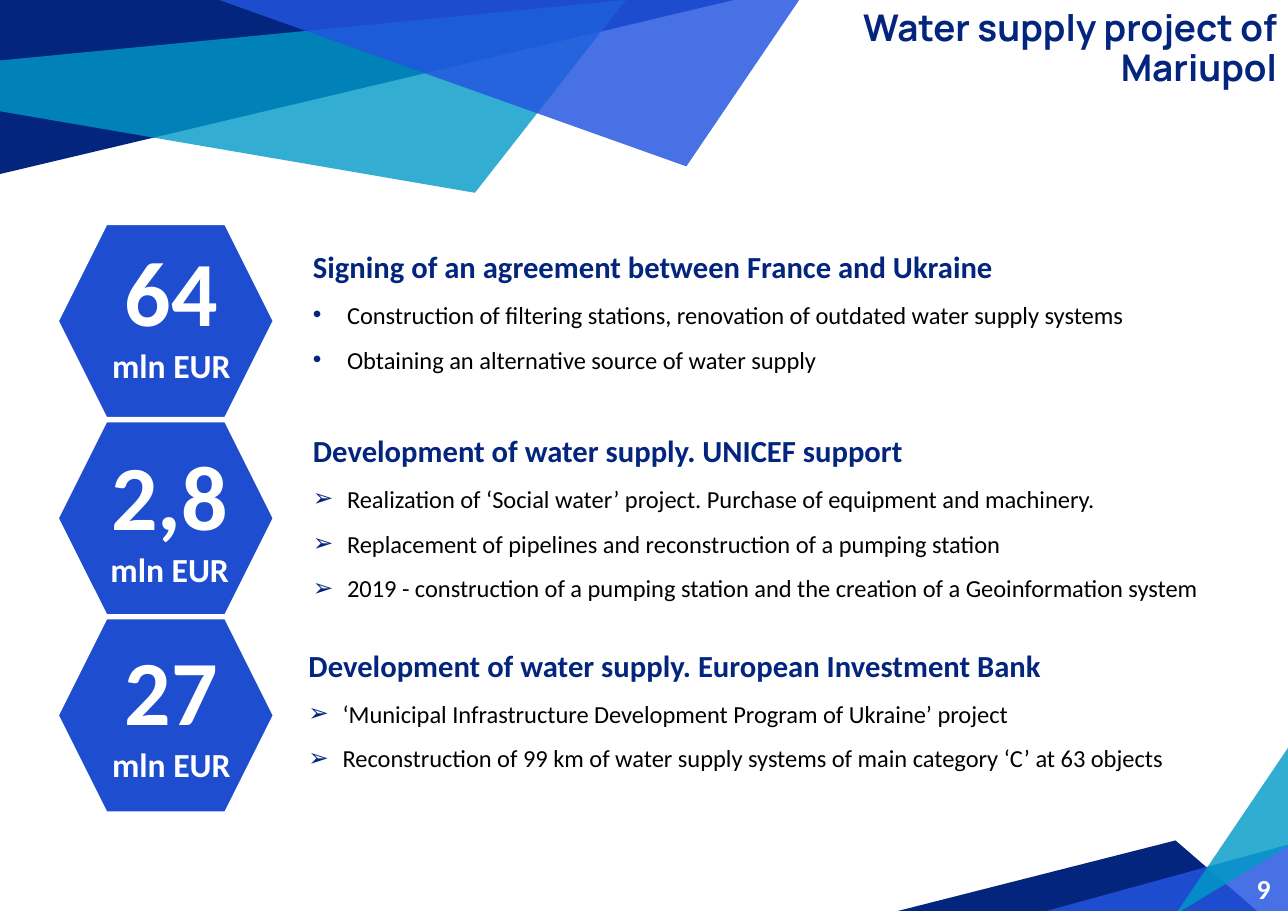
from dataclasses import dataclass

from lxml import etree
from pptx import Presentation
from pptx.dml.color import RGBColor
from pptx.enum.shapes import MSO_SHAPE
from pptx.enum.text import MSO_ANCHOR, MSO_AUTO_SIZE, PP_ALIGN
from pptx.oxml.ns import qn
from pptx.util import Inches, Pt

HEXAGON = MSO_SHAPE.HEXAGON
TOP, MIDDLE = MSO_ANCHOR.TOP, MSO_ANCHOR.MIDDLE
NO_AUTOFIT = MSO_AUTO_SIZE.NONE
LEFT, CENTER, RIGHT = PP_ALIGN.LEFT, PP_ALIGN.CENTER, PP_ALIGN.RIGHT


@dataclass(frozen=True)
class Theme:
    navy: str = "03257E"
    royal: str = "2455E0"
    cyan: str = "009AC7"
    badge: str = "1E4DD0"
    white: str = "FFFFFF"
    black: str = "000000"
    body_font: str = "Calibri"
    title_font: str = "Manrope"
    title: int = 24
    heading: int = 20
    item: int = 16
    amount: int = 60
    unit: int = 22
    page: int = 18


@dataclass(frozen=True)
class Box:
    left: float
    top: float
    width: float
    height: float


@dataclass(frozen=True)
class Facet:
    points: tuple[tuple[float, float], ...]
    color: str
    opacity: int = 100


@dataclass(frozen=True)
class Project:
    amount: str
    amount_box: Box
    heading: str
    bullet: str
    items: tuple[str, ...]
    body_box: Box


THEME = Theme()
HEXAGON_TOP, HEXAGON_PITCH = 2.03, 1.79
LIST_INDENT = 0.31

FACETS = (
    Facet(((0, 0), (0, 1.58), (6.66, 0)), THEME.navy),
    Facet(((-0.01, 0.55), (0, 1.01), (4.31, 1.75), (5.68, 0)), THEME.cyan, 80),
    Facet(((8.15, 8.27), (11.41, 8.27), (10.67, 7.63)), THEME.navy),
    Facet(((11.72, 7.66), (11.72, 8.3), (9.39, 8.3)), THEME.royal, 83),
    Facet(((11.71, 7.67), (11.71, 6.76), (10.67, 8.3)), THEME.cyan, 81),
    Facet(((1.99, 0), (6.23, 1.51), (7.26, -0.01), (7.12, 0)), THEME.royal, 83),
)

PROJECTS = (
    Project(
        "64", Box(0.76, 2.08, 1.59, 1.48),
        "Signing of an agreement between France and Ukraine", "•",
        ("Construction of filtering stations, renovation of outdated water supply systems",
         "Obtaining an alternative source of water supply"),
        Box(2.74, 2.13, 9.18, 1.33),
    ),
    Project(
        "2,8", Box(0.73, 3.93, 1.62, 1.48),
        "Development of water supply. UNICEF support", "➢",
        ("Realization of ‘Social water’ project. Purchase of equipment and machinery.",
         "Replacement of pipelines and reconstruction of a pumping station",
         "2019 - construction of a pumping station and the creation of a Geoinformation system"),
        Box(2.74, 3.8, 9.21, 2.06),
    ),
    Project(
        "27", Box(0.76, 5.7, 1.59, 1.48),
        "Development of water supply. European Investment Bank", "➢",
        ("‘Municipal Infrastructure Development Program of Ukraine’ project",
         "Reconstruction of 99 km of water supply systems of main category ‘C’ at 63 objects"),
        Box(2.7, 5.75, 9.13, 1.65),
    ),
)


def place(shape, box: Box) -> None:
    shape.left, shape.top = Inches(box.left), Inches(box.top)
    shape.width, shape.height = Inches(box.width), Inches(box.height)


def prepare_frame(frame, anchor=TOP) -> None:
    frame.word_wrap = True
    frame.auto_size = NO_AUTOFIT
    frame.vertical_anchor = anchor


def style(paragraph, size: int, color: str, align=LEFT, bold: bool = True,
          font: str = THEME.body_font) -> None:
    paragraph.alignment = align
    paragraph.space_before = Pt(0)
    paragraph.font.size = Pt(size)
    paragraph.font.bold = bold
    paragraph.font.name = font
    paragraph.font.color.rgb = RGBColor.from_string(color)


def set_bullet(paragraph, bullet: str) -> None:
    properties = paragraph._p.get_or_add_pPr()
    indent = Inches(LIST_INDENT) if bullet else 0
    properties.set("marL", str(indent))
    properties.set("indent", str(-indent))
    if bullet:
        bullet_color = etree.SubElement(properties, qn("a:buClr"))
        etree.SubElement(bullet_color, qn("a:srgbClr"), val=THEME.navy)
        etree.SubElement(properties, qn("a:buFont"), typeface="Arial")
        etree.SubElement(properties, qn("a:buChar"), char=bullet)
    else:
        etree.SubElement(properties, qn("a:buNone"))


def draw_facet(slide, facet: Facet) -> None:
    corners = [(Inches(x), Inches(y)) for x, y in facet.points]
    builder = slide.shapes.build_freeform(*corners[0])
    builder.add_line_segments(corners[1:], close=True)
    shape = builder.convert_to_shape()
    shape.shadow.inherit = False
    shape.line.fill.background()
    shape.fill.solid()
    shape.fill.fore_color.rgb = RGBColor.from_string(facet.color)
    if facet.opacity < 100:
        color = shape._element.spPr.find(f".//{qn('a:srgbClr')}")
        etree.SubElement(color, qn("a:alpha"), val=str(facet.opacity * 1000))


def draw_badge(slide, project: Project, top: float) -> None:
    hexagon = slide.shapes.add_shape(HEXAGON, 0, 0, 0, 0)
    place(hexagon, Box(0.52, top, 1.97, 1.77))
    hexagon.shadow.inherit = False
    hexagon.fill.solid()
    hexagon.fill.fore_color.rgb = RGBColor.from_string(THEME.badge)
    hexagon.line.color.rgb = RGBColor.from_string(THEME.white)
    hexagon.line.width = Pt(2)

    label = slide.shapes.add_textbox(0, 0, 0, 0)
    place(label, project.amount_box)
    prepare_frame(label.text_frame)
    label.text_frame.text = f"{project.amount}\nmln EUR"
    for paragraph, size in zip(label.text_frame.paragraphs, (THEME.amount, THEME.unit)):
        style(paragraph, size, THEME.white, CENTER)


def fill_project(body, project: Project) -> None:
    place(body, project.body_box)
    prepare_frame(body.text_frame)
    body.text_frame.text = "\n".join((project.heading, *project.items))
    for number, paragraph in enumerate(body.text_frame.paragraphs):
        is_heading = number == 0
        set_bullet(paragraph, "" if is_heading else project.bullet)
        paragraph.line_spacing = 1.21
        paragraph.space_after = Pt(6)
        if is_heading:
            style(paragraph, THEME.heading, THEME.navy)
        else:
            style(paragraph, THEME.item, THEME.black, bold=False)


def fill_title(title) -> None:
    place(title, Box(7.15, -0.04, 4.57, 1.38))
    frame = title.text_frame
    prepare_frame(frame)
    frame.margin_left = frame.margin_right = Inches(0.13)
    frame.margin_top = frame.margin_bottom = Inches(0.13)
    frame.text = "Water supply project of Mariupol"
    frame.paragraphs[0].line_spacing = 0.9
    style(frame.paragraphs[0], THEME.title, THEME.navy, RIGHT, font=THEME.title_font)


def draw_page_number(slide) -> None:
    page_number = slide.shapes.add_textbox(0, 0, 0, 0)
    place(page_number, Box(11.04, 7.87, 0.59, 0.4))
    prepare_frame(page_number.text_frame, MIDDLE)
    page_number.text_frame.text = "9"
    style(page_number.text_frame.paragraphs[0], THEME.page, THEME.white, RIGHT)


def main() -> None:
    presentation = Presentation()
    presentation.slide_width, presentation.slide_height = Inches(11.69), Inches(8.27)
    # The comparison layout offers a title and four bodies
    slide = presentation.slides.add_slide(presentation.slide_layouts[4])
    title, *bodies, spare = slide.placeholders
    spare._element.getparent().remove(spare._element)

    # Corner decoration
    for facet in FACETS:
        draw_facet(slide, facet)

    # Title, projects and page number
    fill_title(title)
    for row, (body, project) in enumerate(zip(bodies, PROJECTS)):
        fill_project(body, project)
        draw_badge(slide, project, HEXAGON_TOP + row * HEXAGON_PITCH)
    draw_page_number(slide)

    presentation.save("out.pptx")


if __name__ == "__main__":
    main()
